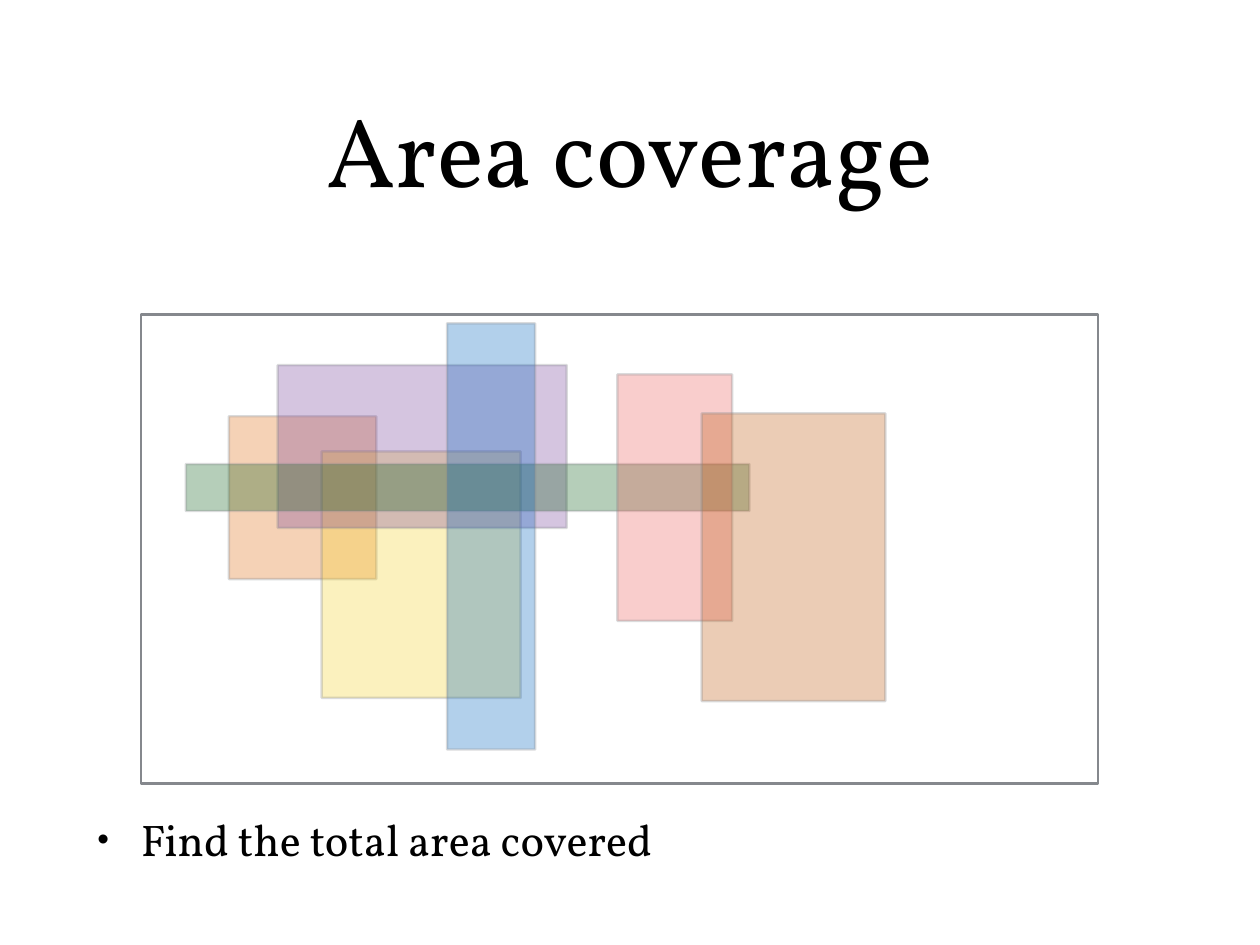
from dataclasses import dataclass

from lxml.etree import SubElement
from pptx import Presentation
from pptx.dml.color import RGBColor
from pptx.enum.shapes import MSO_SHAPE
from pptx.enum.text import MSO_ANCHOR, MSO_AUTO_SIZE, PP_ALIGN
from pptx.oxml.ns import qn
from pptx.util import Inches, Pt

FONT = "Vollkorn"
INK = "000000"
OUTLINE = "85888D"
OPACITY = 30

COVERING_RECTANGLES = [
    ("DE6A10", 9.2, 21.7, 15.4, 34.7),
    ("F5D328", 18.9, 29.2, 20.8, 52.5),
    ("773F9B", 14.3, 10.8, 30.2, 34.7),
    ("0B5D18", 4.7, 31.9, 58.9, 10),
    ("0365C0", 32, 1.9, 9.2, 90.8),
    ("EC5C57", 49.8, 12.8, 12, 52.5),
    ("BD590C", 58.6, 21.1, 19.2, 61.3),
]


@dataclass
class Box:
    """A rectangular region measured in EMU."""

    left: int
    top: int
    width: int
    height: int


def inner_box(box, left, top, width, height):
    """Return a box given in percent of an outer one."""
    return Box(
        box.left + round(box.width * left / 100),
        box.top + round(box.height * top / 100),
        round(box.width * width / 100),
        round(box.height * height / 100),
    )


def apply_color(fill, value, opacity=100):
    """Set a solid fill's colour and opacity from a hex string."""
    fill.solid()
    fill.fore_color.rgb = RGBColor.from_string(value)
    if opacity < 100:
        color = fill._xPr.find(qn("a:solidFill"))[0]
        SubElement(color, qn("a:alpha"), val=str(opacity * 1000))


def write_text(placeholder, box, text, size, align=PP_ALIGN.LEFT, space_before=0):
    """Place a placeholder in its box and fill it with formatted text."""
    placeholder.left, placeholder.top = box.left, box.top
    placeholder.width, placeholder.height = box.width, box.height
    frame = placeholder.text_frame
    frame.word_wrap = True
    frame.auto_size = MSO_AUTO_SIZE.NONE
    frame.vertical_anchor = MSO_ANCHOR.MIDDLE
    frame.margin_left = frame.margin_right = Inches(0.06)
    frame.margin_top = frame.margin_bottom = Inches(0.06)
    paragraph = frame.paragraphs[0]
    paragraph.alignment = align
    paragraph.space_before = Pt(space_before)
    run = paragraph.add_run()
    run.text = text
    run.font.name = FONT
    run.font.size = Pt(size)
    apply_color(run.font.fill, INK)
    return paragraph


def add_bullet(paragraph, character="•", indent=0.49, size=75):
    """Give a paragraph a hanging bullet."""
    properties = paragraph._p.get_or_add_pPr()
    properties.set("marL", str(Inches(indent)))
    properties.set("indent", str(-Inches(indent)))
    SubElement(properties, qn("a:buSzPct"), val=str(size * 1000))
    SubElement(properties, qn("a:buChar"), char=character)


def add_rectangle(slide, box, fill=None, opacity=100):
    """Draw an outlined rectangle, filled when a colour is given."""
    shape = slide.shapes.add_shape(
        MSO_SHAPE.RECTANGLE, box.left, box.top, box.width, box.height
    )
    shape.shadow.inherit = False
    if fill:
        apply_color(shape.fill, fill, opacity)
    else:
        shape.fill.background()
    shape.line.width = Pt(2)
    apply_color(shape.line.fill, OUTLINE, opacity)


def add_coverage_diagram(slide, box):
    """Draw the frame and the overlapping rectangles inside it."""
    add_rectangle(slide, box)
    for fill, *shares in COVERING_RECTANGLES:
        add_rectangle(slide, inner_box(box, *shares), fill, OPACITY)


def build_coverage_slide(presentation, box):
    """Add the slide with its title, diagram and task."""
    slide = presentation.slides.add_slide(presentation.slide_layouts[1])
    title, body = slide.placeholders
    write_text(title, inner_box(box, 7.31, 4.59, 85.37, 22.12), "Area coverage",
               size=80, align=PP_ALIGN.CENTER)
    add_coverage_diagram(slide, inner_box(box, 11.18, 33.27, 75.95, 49.67))
    task = write_text(body, inner_box(box, 7.31, 85, 85.37, 7.5),
                      "Find the total area covered", size=36, space_before=42)
    add_bullet(task)


def main():
    """Create and save the presentation."""
    presentation = Presentation()
    presentation.slide_width = Inches(14.22)
    presentation.slide_height = Inches(10.67)
    build_coverage_slide(
        presentation,
        Box(0, 0, presentation.slide_width, presentation.slide_height),
    )
    presentation.save("out.pptx")


if __name__ == "__main__":
    main()
